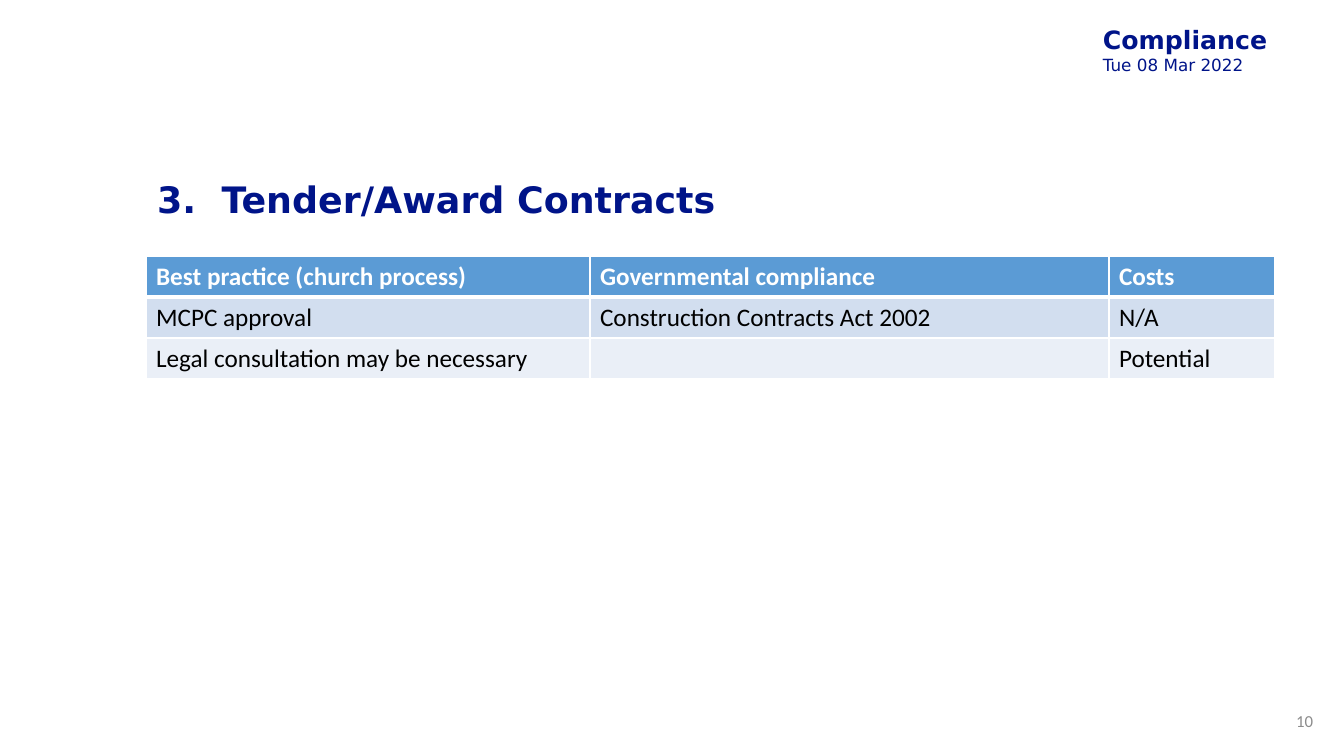
from lxml import etree
from pptx import Presentation
from pptx.dml.color import RGBColor
from pptx.enum.text import MSO_ANCHOR, PP_ALIGN
from pptx.oxml.ns import qn
from pptx.util import Pt

PX = 914400 / 100.8
NAVY, WHITE, BLACK, GREY = "001489", "FFFFFF", "000000", "8C8C8C"
HEADER_BLUE, BAND_DARK, BAND_LIGHT = "5B9BD5", "D2DEEF", "EAEFF7"
LEFT, RIGHT = PP_ALIGN.LEFT, PP_ALIGN.RIGHT
MIDDLE = MSO_ANCHOR.MIDDLE


def px(*lengths):
    return [round(length * PX) for length in lengths]


def write(paragraph, text, size=18, face="Calibri", color=BLACK, bold=False, align=LEFT):
    paragraph.alignment = align
    run = paragraph.add_run()
    run.text = text
    run.font.size = Pt(size)
    run.font.name = face
    run.font.bold = bold
    run.font.color.rgb = RGBColor.from_string(color)


prs = Presentation()
prs.slide_width, prs.slide_height = px(1344, 756)
slide = prs.slides.add_slide(prs.slide_layouts[5])

# Topic and date
topic = slide.shapes.add_textbox(*px(1096, 20, 180, 89)).text_frame
topic.word_wrap = False
topic.margin_left, topic.margin_top, topic.margin_right, topic.margin_bottom = px(7, 4, 7, 4)
write(topic.paragraphs[0], "Compliance", face="DejaVu Sans", color=NAVY, bold=True)
write(topic.add_paragraph(), "Tue 08 Mar 2022", size=12, face="DejaVu Sans", color=NAVY)

# Title
title = slide.shapes.title
title.left, title.top, title.width, title.height = px(147, 151, 1129, 102)
title.text_frame.word_wrap = True
title.text_frame.vertical_anchor = MIDDLE
heading = title.text_frame.paragraphs[0]
heading.line_spacing = 0.9
write(heading, "3.  Tender/Award Contracts", size=26, face="DejaVu Sans", color=NAVY, bold=True)

# Compliance table
rows = [
    ("Best practice (church process)", "Governmental compliance", "Costs"),
    ("MCPC approval", "Construction Contracts Act 2002", "N/A"),
    ("Legal consultation may be necessary", "", "Potential"),
]
row_fills = [HEADER_BLUE, BAND_DARK, BAND_LIGHT]
column_widths = px(444, 519, 166)
table = slide.shapes.add_table(3, 3, *px(146, 256, 1129, 123)).table
for column, width in zip(table.columns, column_widths):
    column.width = width

for r, (texts, fill) in enumerate(zip(rows, row_fills)):
    table.rows[r].height = px(41)[0]
    for c, text in enumerate(texts):
        cell = table.cell(r, c)
        properties = cell._tc.get_or_add_tcPr()
        for side in ("lnL", "lnR", "lnT", "lnB"):
            under_header = (r, side) in ((0, "lnB"), (1, "lnT"))
            border = etree.SubElement(properties, qn(f"a:{side}"), w=str(Pt(3 if under_header else 1)))
            line_fill = etree.SubElement(border, qn("a:solidFill"))
            etree.SubElement(line_fill, qn("a:srgbClr"), val=WHITE)
        cell.fill.solid()
        cell.fill.fore_color.rgb = RGBColor.from_string(fill)
        if text:
            write(cell.text_frame.paragraphs[0], text, color=BLACK if r else WHITE, bold=r == 0)

# Page number
page = slide.shapes.add_textbox(*px(1281, 701, 42, 40)).text_frame
page.word_wrap = True
page.vertical_anchor = MIDDLE
write(page.paragraphs[0], "10", size=12, color=GREY, align=RIGHT)

prs.save("out.pptx")
